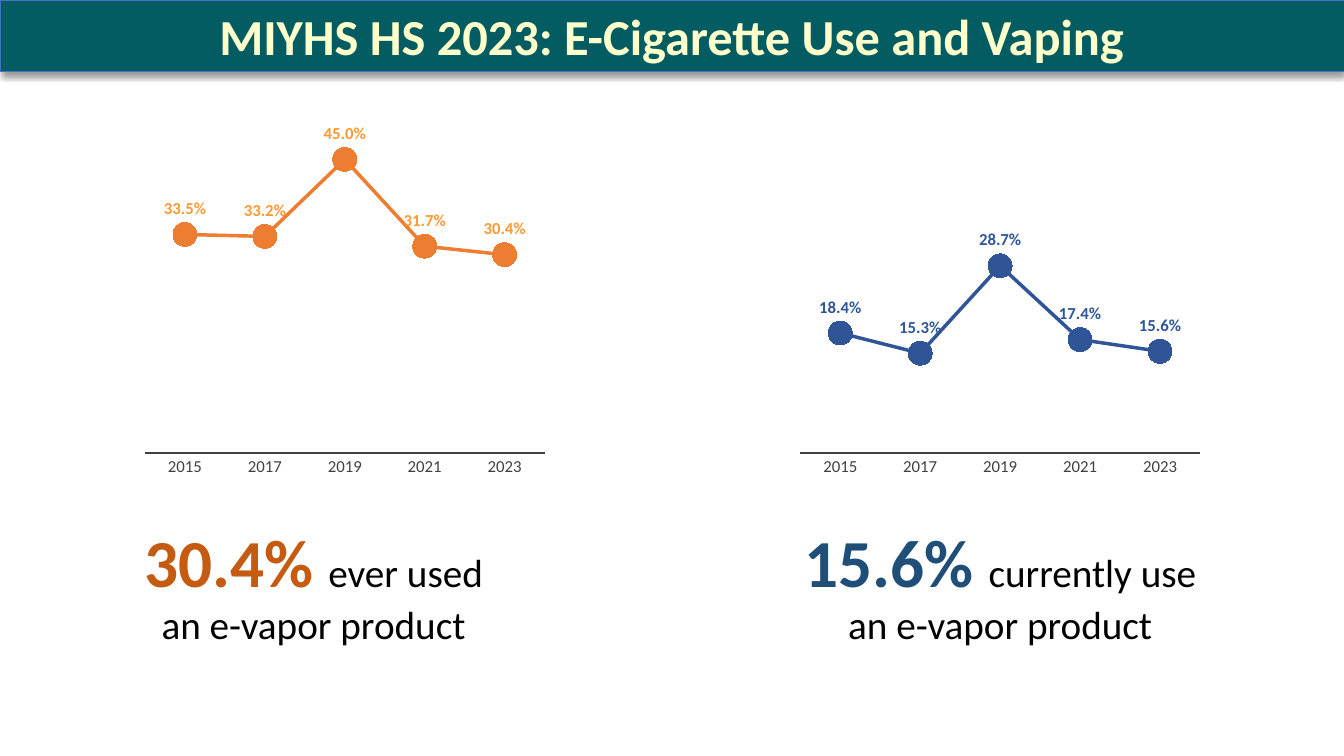
"""Build the slide on high school e-cigarette use and vaping trends."""
from lxml.etree import fromstring
from pptx import Presentation
from pptx.chart.data import CategoryChartData
from pptx.dml.color import RGBColor
from pptx.enum.chart import XL_CHART_TYPE as ChartType, XL_LABEL_POSITION as LabelPos
from pptx.enum.chart import XL_MARKER_STYLE as Marker, XL_TICK_MARK as Tick
from pptx.enum.shapes import MSO_SHAPE as Shape
from pptx.enum.text import MSO_ANCHOR as Anchor, PP_ALIGN as Align
from pptx.oxml import parse_xml
from pptx.util import Inches, Pt

DRAWING = 'xmlns:a="http://schemas.openxmlformats.org/drawingml/2006/main"'
CHART = 'xmlns:c="http://schemas.openxmlformats.org/drawingml/2006/chart"'


def rgb(value):
    return RGBColor.from_string(value)


def style(font, size, color, bold=False):
    font.name, font.size, font.bold = "Calibri", Pt(size), bold
    font.color.rgb = rgb(color)


deck = Presentation()
deck.slide_width, deck.slide_height = Inches(13.33), Inches(7.5)
slide = deck.slides.add_slide(deck.slide_layouts[6])

banner = slide.shapes.add_shape(Shape.RECTANGLE, 0, 0, Inches(13.33), Inches(0.71))
banner.fill.solid()
banner.fill.fore_color.rgb = rgb("035C61")
banner.line.color.rgb = rgb("4472C4")
banner.line.width = Pt(0.5)
banner.shadow.inherit = False
banner._element.spPr.find("{*}effectLst").append(fromstring(
    f'<a:outerShdw {DRAWING} blurRad="{Pt(4)}" dist="{Pt(3)}" dir="5400000" rotWithShape="0">'
    '<a:srgbClr val="000000"><a:alpha val="40000"/></a:srgbClr></a:outerShdw>'))
banner.text_frame.vertical_anchor = Anchor.MIDDLE
heading = banner.text_frame.paragraphs[0]
heading.alignment = Align.CENTER
title = heading.add_run()
title.text = "MIYHS HS 2023: E-Cigarette Use and Vaping"
style(title.font, 36, "FFFFCC", True)

years = ["2015", "2017", "2019", "2021", "2023"]
measures = [
    (1.35, [0.335, 0.332, 0.45, 0.317, 0.304], "ED7D31", "FF9933",
     1.11, 4, "30.4% ", "C55A11", "ever used an e-vapor product"),
    (7.85, [0.184, 0.153, 0.287, 0.174, 0.156], "2F5597", "2F5597",
     7.73, 4.38, "15.6% ", "1F4E79", "currently use an e-vapor product"),
]
for (chart_left, rates, line_color, label_color,
     caption_left, caption_width, rate, rate_color, behavior) in measures:
    data = CategoryChartData(number_format="0.0%")
    data.categories = years
    data.add_series("Series 1", rates)
    trend = slide.shapes.add_chart(
        ChartType.LINE_MARKERS, Inches(chart_left), Inches(1.18),
        Inches(4.14), Inches(3.65), data).chart
    trend.has_legend = trend.has_title = False
    style(trend.font, 10, "000000")
    trend._chartSpace.find("{*}chart").addnext(parse_xml(
        f'<c:spPr {CHART} {DRAWING}>'
        '<a:solidFill><a:srgbClr val="FFFFFF"/></a:solidFill>'
        f'<a:ln w="{Pt(0.75)}"><a:solidFill><a:srgbClr val="FFFFFF"/></a:solidFill></a:ln>'
        '</c:spPr>'))

    plot_area = trend._chartSpace.chart.plotArea
    for old_layout in plot_area.findall("{*}layout"):
        plot_area.remove(old_layout)
    plot_area.insert(0, parse_xml(
        f'<c:layout {CHART}><c:manualLayout><c:layoutTarget val="inner"/>'
        '<c:xMode val="edge"/><c:yMode val="edge"/><c:x val="0.02"/><c:y val="0.02"/>'
        '<c:w val="0.96"/><c:h val="0.89"/></c:manualLayout></c:layout>'))

    year_axis, rate_axis = trend.category_axis, trend.value_axis
    year_axis.major_tick_mark = year_axis.minor_tick_mark = Tick.NONE
    year_axis.format.line.color.rgb = rgb("404040")
    year_axis.format.line.width = Pt(1.5)
    style(year_axis.tick_labels.font, 12, "404040")
    rate_axis.minimum_scale, rate_axis.maximum_scale = 0, 0.5
    rate_axis.major_unit = 0.1
    rate_axis.has_major_gridlines = False
    rate_axis.visible = False

    trend.plots[0].vary_by_categories = False
    series = trend.plots[0].series[0]
    series.smooth = False
    series.format.line.color.rgb = rgb(line_color)
    series.format.line.width = Pt(2.5)
    series.marker.style, series.marker.size = Marker.CIRCLE, 17
    series.marker.format.fill.solid()
    series.marker.format.fill.fore_color.rgb = rgb(line_color)
    series.marker.format.line.color.rgb = rgb(line_color)
    labels = series.data_labels
    labels.show_value = True
    labels.position = LabelPos.ABOVE
    labels.number_format, labels.number_format_is_linked = "0.0%", False
    style(labels.font, 12, label_color, True)

    caption = slide.shapes.add_textbox(
        Inches(caption_left), Inches(5.11), Inches(caption_width), Inches(1.38)).text_frame
    caption.word_wrap = True
    finding = caption.paragraphs[0]
    finding.alignment = Align.CENTER
    for words, size, color, bold in [(rate, 48, rate_color, True),
                                     (behavior, 28, "000000", False)]:
        run = finding.add_run()
        run.text = words
        style(run.font, size, color, bold)

deck.save("out.pptx")
